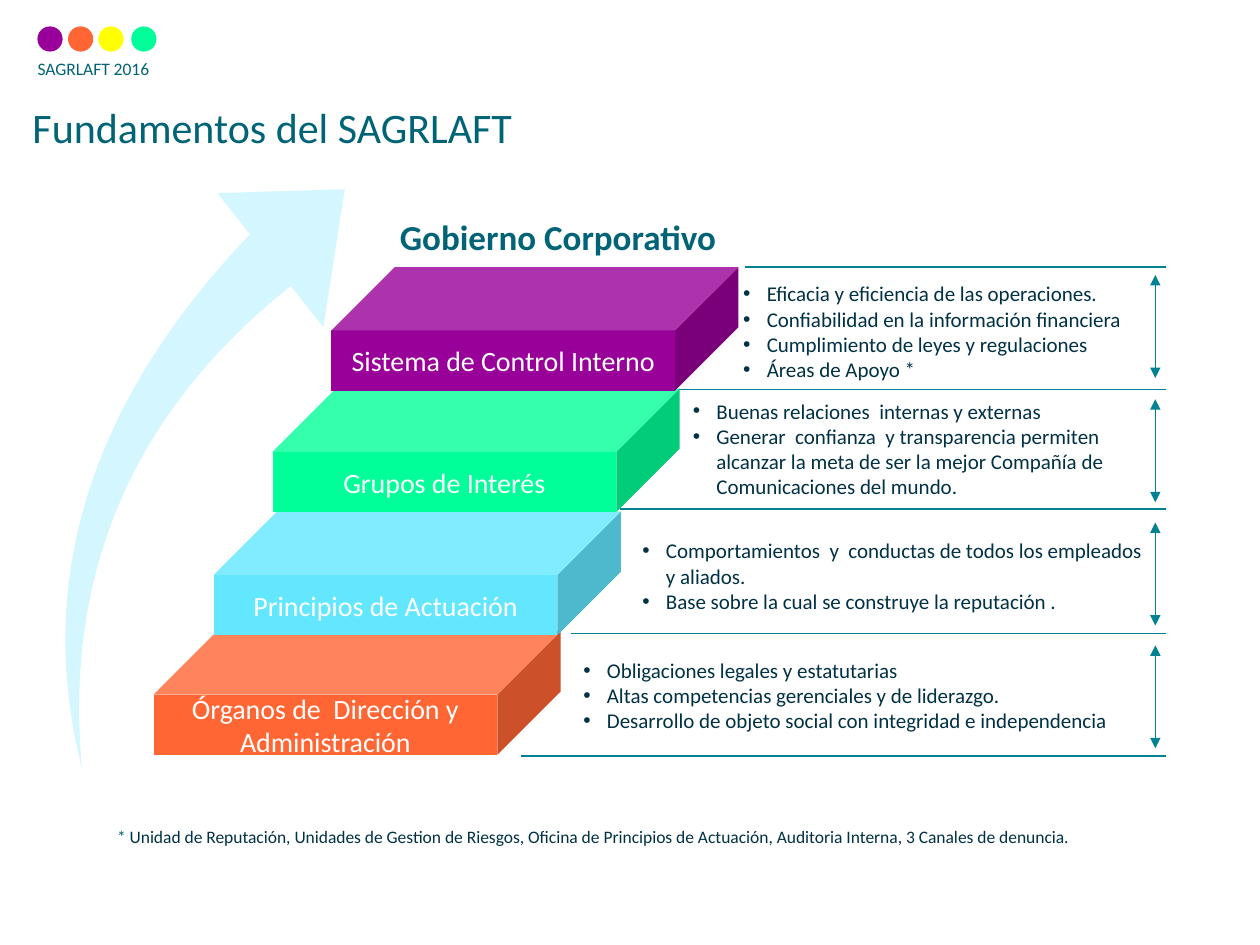
from dataclasses import dataclass
from typing import Optional

from lxml.etree import SubElement
from pptx import Presentation
from pptx.dml.color import RGBColor as RGB
from pptx.enum.shapes import MSO_CONNECTOR as Connector, MSO_SHAPE as Shape
from pptx.enum.text import MSO_ANCHOR as Anchor, PP_ALIGN as Align
from pptx.oxml.ns import qn
from pptx.util import Pt


@dataclass(frozen=True)
class Theme:
    font: str = "Calibri"
    heading: str = "006476"
    body: str = "003144"
    rule: str = "008294"
    swoosh: str = "D3F6FF"
    white: str = "FFFFFF"
    purple: str = "990099"
    orange: str = "FF6633"
    yellow: str = "FFFF00"
    green: str = "00FF99"
    cyan: str = "62E7FF"
    title_size: float = 24
    subtitle_size: float = 20
    step_size: float = 16
    bullet_size: float = 12
    small_size: float = 10
    line_width: float = 0.75


@dataclass(frozen=True)
class Box:
    left: float
    top: float
    width: float
    height: float

    def lengths(self) -> tuple:
        return Pt(self.left), Pt(self.top), Pt(self.width), Pt(self.height)


@dataclass(frozen=True)
class Step:
    label: str
    color: str
    cube: Box
    notes: Box
    bullets: tuple
    rule_left: float
    rule_top: float
    arrow_top: float


THEME = Theme()
RULE_RIGHT = 666
ARROW_X, ARROW_LENGTH = 660.2, 58.8
BULLET_INDENT = 13.5
CUBE_SIZE = (232.6, 70.6)

# Steps from the bottom of the staircase to the top
STEPS = (
    Step("Órganos de  Dirección y Administración", THEME.orange,
         Box(87.8, 360.7, *CUBE_SIZE), Box(326.2, 372.2, 323.3, 51.1),
         ("Obligaciones legales y estatutarias",
          "Altas competencias gerenciales y de liderazgo.",
          "Desarrollo de objeto social con integridad e independencia"),
         326.2, 362.2, 368.8),
    Step("Principios de Actuación", THEME.cyan,
         Box(122.2, 292.3, *CUBE_SIZE), Box(360, 303.8, 300.2, 51.1),
         ("Comportamientos  y  conductas de todos los empleados y aliados.",
          "Base sobre la cual se construye la reputación ."),
         354.2, 290.9, 298.6),
    Step("Grupos de Interés", THEME.green,
         Box(155.8, 222, *CUBE_SIZE), Box(388.8, 223.9, 271.4, 65.5),
         ("Buenas relaciones  internas y externas",
          "Generar  confianza  y transparencia permiten alcanzar la meta de "
          "ser la mejor Compañía de Comunicaciones del mundo."),
         383, 222.5, 228.2),
    Step("Sistema de Control Interno", THEME.purple,
         Box(189.4, 152.6, *CUBE_SIZE), Box(417.6, 157, 288, 65.5),
         ("Eficacia y eficiencia de las operaciones.",
          "Confiabilidad en la información financiera",
          "Cumplimiento de leyes y regulaciones",
          "Áreas de Apoyo *"),
         425.5, 152.6, 157.2),
)


def format_run(run, size: float, color: str, bold: bool = False) -> None:
    run.font.name = THEME.font
    run.font.size = Pt(size)
    run.font.bold = bold
    run.font.color.rgb = RGB.from_string(color)


def add_text(slide, box: Box, text: str, size: float, color: str,
             bold: bool = False, align: Align = Align.LEFT):
    label = slide.shapes.add_textbox(*box.lengths())
    frame = label.text_frame
    frame.word_wrap = True
    frame.text = text
    for paragraph in frame.paragraphs:
        paragraph.alignment = align
        for run in paragraph.runs:
            format_run(run, size, color, bold)
    return label


def add_solid(slide, kind: Shape, box: Box, color: str):
    solid = slide.shapes.add_shape(kind, *box.lengths())
    solid.shadow.inherit = False
    solid.fill.solid()
    solid.fill.fore_color.rgb = RGB.from_string(color)
    solid.line.fill.background()
    return solid


def add_line(slide, x1: float, y1: float, x2: float, y2: float,
             arrowheads: bool = False) -> None:
    line = slide.shapes.add_connector(
        Connector.STRAIGHT, Pt(x1), Pt(y1), Pt(x2), Pt(y2))
    line.line.width = Pt(THEME.line_width)
    line.line.color.rgb = RGB.from_string(THEME.rule)
    if arrowheads:
        outline = line.line._get_or_add_ln()
        for end in ("a:headEnd", "a:tailEnd"):
            SubElement(outline, qn(end), type="triangle")
    SubElement(line._element.spPr, qn("a:effectLst"))


def add_notes(slide, step: Step) -> None:
    notes = add_text(slide, step.notes, "\n".join(step.bullets),
                     THEME.bullet_size, THEME.body)
    for paragraph in notes.text_frame.paragraphs:
        properties = paragraph._p.get_or_add_pPr()
        properties.set("marL", str(Pt(BULLET_INDENT)))
        properties.set("indent", str(-Pt(BULLET_INDENT)))
        SubElement(properties, qn("a:buFont"), typeface="Arial")
        SubElement(properties, qn("a:buChar"), char="•")


def add_cube(slide, step: Step) -> None:
    cube = add_solid(slide, Shape.CUBE, step.cube, step.color)
    cube.adjustments[0] = 0.513
    frame = cube.text_frame
    frame.word_wrap = True
    frame.vertical_anchor = Anchor.MIDDLE
    frame.text = step.label
    frame.paragraphs[0].alignment = Align.CENTER
    format_run(frame.paragraphs[0].runs[0], THEME.step_size, THEME.white)


def add_footnote(slide, box: Box, mark: str, text: str) -> None:
    note = add_text(slide, box, mark, THEME.small_size, THEME.heading)
    run = note.text_frame.paragraphs[0].add_run()
    run.text = text
    format_run(run, THEME.small_size, THEME.body)


def build(output: Optional[Presentation] = None) -> None:
    deck = Presentation()
    deck.slide_width, deck.slide_height = Pt(720), Pt(540)
    slide = deck.slides.add_slide(deck.slide_layouts[6])

    # Header dots and tag
    dots = ((21.4, THEME.purple), (38.9, THEME.orange),
            (56.2, THEME.yellow), (75, THEME.green))
    for left, color in dots:
        add_solid(slide, Shape.OVAL, Box(left, 15.1, 14.4, 14.4), color)
    add_text(slide, Box(14.4, 29.5, 201.6, 19.4), "SAGRLAFT 2016",
             THEME.small_size, THEME.heading)

    # Explanations and the rules between them
    for step in STEPS:
        add_notes(slide, step)
        add_line(slide, step.rule_left, step.rule_top, RULE_RIGHT, step.rule_top)
        add_line(slide, ARROW_X, step.arrow_top,
                 ARROW_X, step.arrow_top + ARROW_LENGTH, arrowheads=True)
    add_line(slide, 298, 432, RULE_RIGHT, 432)

    # Staircase, lowest step first
    for step in STEPS:
        add_cube(slide, step)

    # Staircase heading and rising arrow
    heading = add_text(slide, Box(221, 119.5, 195.8, 31), "Gobierno Corporativo",
                       THEME.subtitle_size, THEME.heading, True, Align.CENTER)
    heading.fill.solid()
    heading.fill.fore_color.rgb = RGB.from_string(THEME.white)
    swoosh = add_solid(slide, Shape.SWOOSH_ARROW,
                       Box(-38.9, 139, 302.4, 238.3), THEME.swoosh)
    swoosh.adjustments[0], swoosh.adjustments[1] = 0.157, 0.25
    swoosh.rotation = 328.1

    # Title and footnote
    add_text(slide, Box(11.5, 54.7, 544.3, 36.7), "Fundamentos del SAGRLAFT",
             THEME.title_size, THEME.heading)
    add_footnote(slide, Box(59.8, 468.7, 601.2, 19.4), "* ",
                 "Unidad de Reputación, Unidades de Gestion de Riesgos, Oficina de "
                 "Principios de Actuación, Auditoria Interna, 3 Canales de denuncia.")

    deck.save("out.pptx")


if __name__ == "__main__":
    build()
